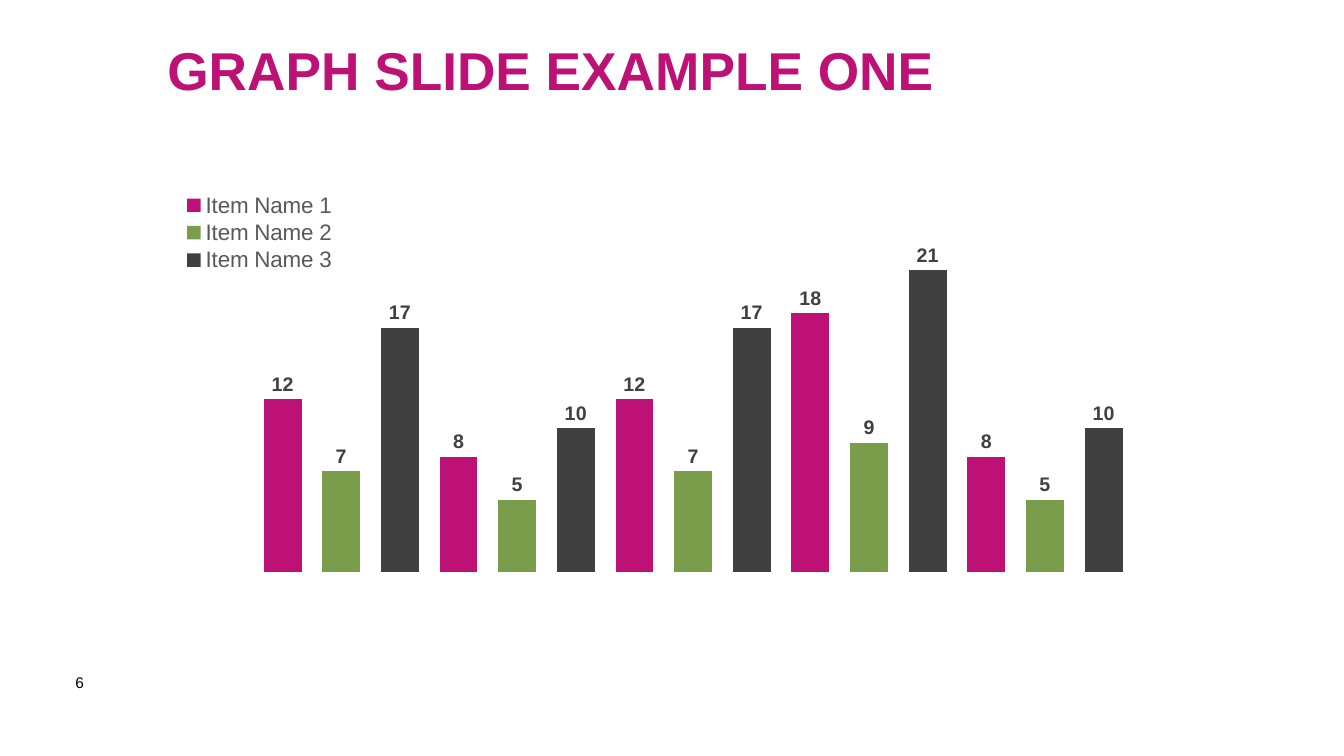
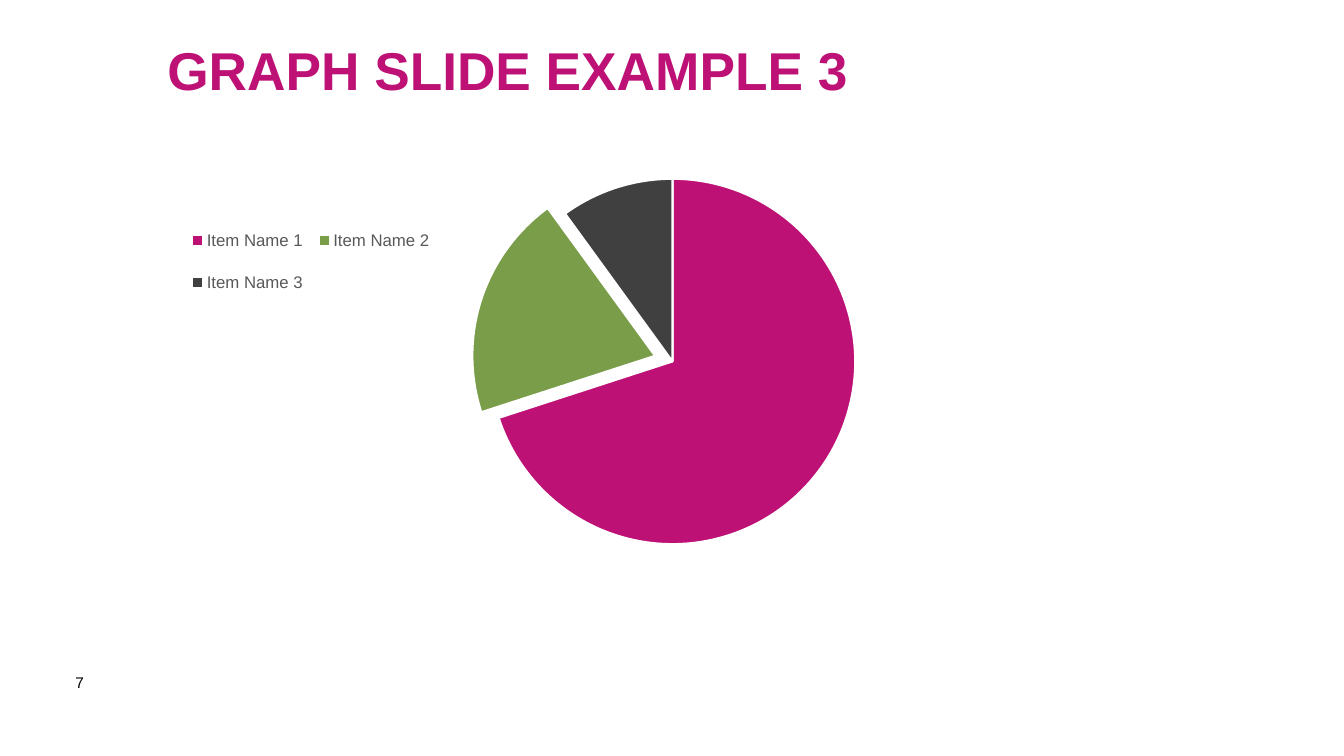
from dataclasses import dataclass

from lxml import etree
from pptx import Presentation
from pptx.chart.chart import Chart
from pptx.chart.data import CategoryChartData
from pptx.dml.color import RGBColor
from pptx.enum import chart as ch, text as tx
from pptx.oxml import ns
from pptx.slide import Slide
from pptx.util import Inches, Pt

FONT = "Arial"
COLORS = {
    "magenta": "BD1176",
    "green": "799D49",
    "charcoal": "404041",
    "label": "404040",
    "legend": "595959",
    "black": "000000",
    "white": "FFFFFF",
}


@dataclass
class Box:
    left: float
    top: float
    width: float
    height: float


@dataclass
class Item:
    name: str
    color: str
    values: list[int]
    offset: int = 0
    share: int = 0


TITLE = Box(1.56, 0.32, 10.24, 0.67)
NUMBER = Box(0.65, 6.63, 0.58, 0.54)
CHART = Box(1.55, 1.63, 10.24, 4.24)
GROUPS = 5
ITEMS = [
    Item("Item Name 1", "magenta", [12, 8, 12, 18, 8], 0, 70),
    Item("Item Name 2", "green", [7, 5, 7, 9, 5], 1, 20),
    Item("Item Name 3", "charcoal", [17, 10, 17, 21, 10], 2, 10),
]


def rgb(name: str) -> RGBColor:
    return RGBColor.from_string(COLORS[name])


def style_font(font, size: float, color: str, bold: bool = False) -> None:
    font.name = FONT
    font.size = Pt(size)
    font.bold = bold
    font.color.rgb = rgb(color)


def write(shape, content: str, box: Box, *, size: float, color: str, bold: bool = False) -> None:
    shape.left, shape.top = Inches(box.left), Inches(box.top)
    shape.width, shape.height = Inches(box.width), Inches(box.height)
    frame = shape.text_frame
    frame.word_wrap = True
    frame.auto_size = tx.MSO_AUTO_SIZE.NONE
    frame.vertical_anchor = tx.MSO_ANCHOR.TOP
    paragraph = frame.paragraphs[0]
    paragraph.alignment = tx.PP_ALIGN.LEFT
    run = paragraph.add_run()
    run.text = content
    style_font(run.font, size, color, bold)


def set_layout(parent, index: int, **settings) -> None:
    for old in parent.findall(ns.qn("c:layout")):
        parent.remove(old)
    layout = etree.Element(ns.qn("c:layout"))
    manual = etree.SubElement(layout, ns.qn("c:manualLayout"))
    for tag, value in settings.items():
        etree.SubElement(manual, ns.qn(f"c:{tag}"), val=str(value))
    parent.insert(index, layout)


def place_part(parent, index: int, box: Box, **target) -> None:
    set_layout(parent, index, **target, xMode="edge", yMode="edge",
               x=box.left, y=box.top, w=box.width, h=box.height)


def add_graph_slide(deck, title: str, number: int) -> Slide:
    slide = deck.slides.add_slide(deck.slide_layouts[5])
    write(slide.shapes.title, title, TITLE, size=38, color="magenta", bold=True)
    page = slide.shapes.add_textbox(0, 0, 0, 0)
    write(page, str(number), NUMBER, size=11, color="black")
    return slide


def add_graph(slide: Slide, kind, data: CategoryChartData, plot: Box,
              legend: Box, legend_side, legend_size: float) -> Chart:
    graph = slide.shapes.add_chart(
        kind, Inches(CHART.left), Inches(CHART.top),
        Inches(CHART.width), Inches(CHART.height), data).chart
    graph.has_title = False
    style_font(graph.font, 10, "black")
    graph.has_legend = True
    graph.legend.position = legend_side
    graph.legend.include_in_layout = False
    style_font(graph.legend.font, legend_size, "legend")
    place_part(graph.element.xpath(".//c:plotArea")[0], 0, plot, layoutTarget="inner")
    place_part(graph.element.xpath(".//c:legend")[0], 1, legend)
    return graph


def paint(part, color: str) -> None:
    part.format.fill.solid()
    part.format.fill.fore_color.rgb = rgb(color)


def add_columns(slide: Slide) -> None:
    data = CategoryChartData()
    data.categories = [str(n + 1) for n in range(GROUPS * len(ITEMS))]
    stack = ITEMS[::-1]
    for item in stack:
        values = [None] * (GROUPS * len(ITEMS))
        values[item.offset::len(ITEMS)] = item.values
        data.add_series(item.name, values)
    graph = add_graph(slide, ch.XL_CHART_TYPE.COLUMN_STACKED, data,
                      Box(0.094, 0.113, 0.852, 0.841), Box(0.02, 0.06, 0.16, 0.2),
                      ch.XL_LEGEND_POSITION.RIGHT, 16)
    graph.category_axis.visible = False
    graph.value_axis.visible = False
    graph.value_axis.has_major_gridlines = False
    graph.value_axis.minimum_scale = 0
    graph.value_axis.maximum_scale = 25
    columns = graph.plots[0]
    columns.vary_by_categories = False
    columns.gap_width = 55
    columns.overlap = 100
    for item, series in zip(stack, columns.series):
        paint(series, item.color)
        series.data_labels.show_value = True
        style_font(series.data_labels.font, 14, "label", True)
        for index in range(item.offset, GROUPS * len(ITEMS), len(ITEMS)):
            label = series.points[index].data_label
            style_font(label.font, 14, "label", True)
            label.position = ch.XL_LABEL_POSITION.INSIDE_END
    for label in graph.element.xpath(".//c:dLbl"):
        set_layout(label, 1, x=0, y=-0.07)


def add_pie(slide: Slide) -> None:
    data = CategoryChartData()
    data.categories = [item.name for item in ITEMS]
    data.add_series("Series 1", [item.share for item in ITEMS])
    graph = add_graph(slide, ch.XL_CHART_TYPE.PIE, data,
                      Box(0.323, 0.034, 0.354, 0.855), Box(0.025, 0.1, 0.25, 0.255),
                      ch.XL_LEGEND_POSITION.BOTTOM, 12)
    pie = graph.plots[0]
    pie.vary_by_categories = True
    for index, item in enumerate(ITEMS):
        wedge = pie.series[0].points[index]
        paint(wedge, item.color)
        wedge.format.line.color.rgb = rgb("white")
        wedge.format.line.width = Pt(1.5)
    fill = graph.element.xpath(".//c:dPt[c:idx/@val='1']/c:spPr")[0]
    fill.addprevious(etree.Element(ns.qn("c:explosion"), val="10"))


def main() -> None:
    deck = Presentation()
    deck.slide_width, deck.slide_height = Inches(13.33), Inches(7.5)
    add_columns(add_graph_slide(deck, "GRAPH SLIDE EXAMPLE ONE", 6))
    add_pie(add_graph_slide(deck, "GRAPH SLIDE EXAMPLE 3", 7))
    deck.save("out.pptx")


if __name__ == "__main__":
    main()
